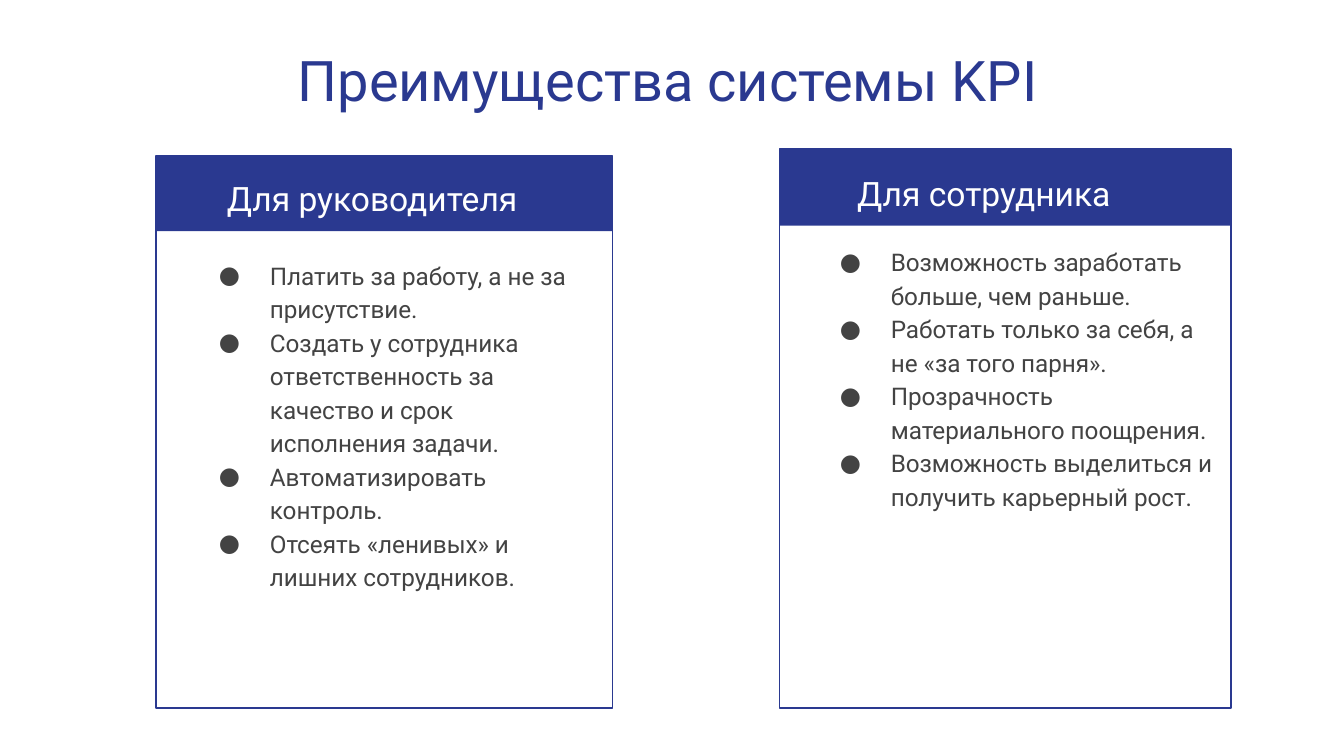
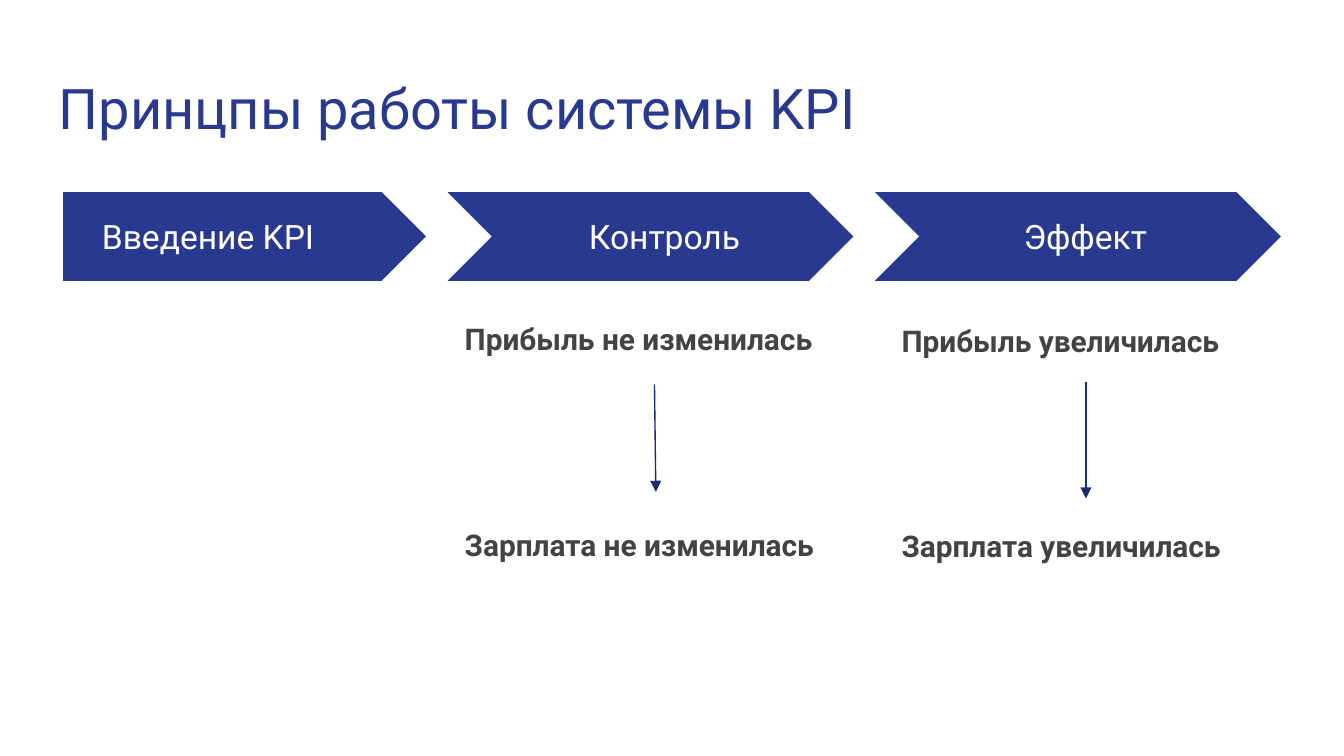
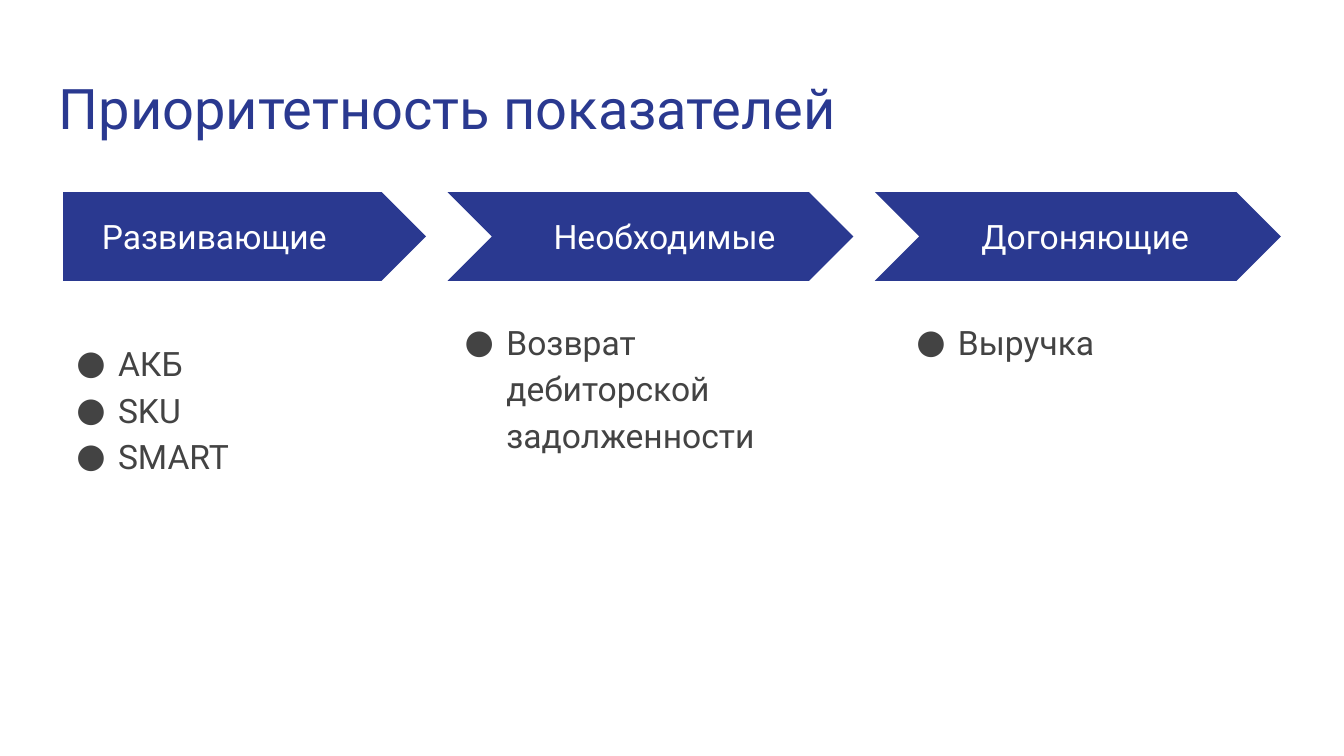
from typing import NamedTuple

from lxml.etree import SubElement
from pptx import Presentation
from pptx.dml.color import RGBColor
from pptx.enum.shapes import MSO_CONNECTOR as Connector, MSO_SHAPE as Preset
from pptx.enum.text import MSO_ANCHOR as Anchor, PP_ALIGN as Align
from pptx.oxml.ns import qn
from pptx.util import Inches, Pt

COLORS = {"navy": "2A3990", "arrow": "1E2B73", "text": "434343", "white": "FFFFFF"}
FONT = "Roboto"
CELL = 0.1  # grid cell side in inches: 100 columns by 56.25 rows
COLUMNS, ROWS = 100, 56.25
INSET = 1
LEADING = 1.15
STEP_GAP = 1.6


class Box(NamedTuple):
    """A region measured in grid columns and rows."""
    left: float
    top: float
    width: float
    height: float

    def within(self, left, top, width, height):
        return Box(self.left + left, self.top + top, width, height)


STEP_ROW = Box(4.7, 14.3, 90.6, 6.6)


def grid(cells):
    return Inches(round(cells * CELL, 3))


def color(name):
    return RGBColor.from_string(COLORS[name])


# Basic parts
def add_preset(page, preset, box, fill=None, line=None):
    shape = page.shapes.add_shape(preset, *map(grid, box))
    shape.shadow.inherit = False
    if fill:
        shape.fill.solid()
        shape.fill.fore_color.rgb = color(fill)
    else:
        shape.fill.background()
    if line:
        shape.line.color.rgb = color(line)
        shape.line.width = Pt(0.75)
    else:
        shape.line.fill.background()
    return shape


def indent_para(para, left, hanging=0):
    properties = para._p.get_or_add_pPr()
    properties.set("marL", str(grid(left)))
    properties.set("indent", str(-grid(hanging)))
    return properties


def add_bullet(para, left, hanging):
    properties = indent_para(para, left, hanging)
    tint = SubElement(properties, qn("a:buClr"))
    SubElement(tint, qn("a:srgbClr"), val=COLORS["text"])
    SubElement(properties, qn("a:buFont"), typeface=FONT)
    SubElement(properties, qn("a:buChar"), char="●")


def add_text(page, box, lines, size, ink="text", bold=False, align=Align.LEFT,
             anchor=Anchor.TOP, leading=None, bullet=None, indent=0, gap=0):
    frame = page.shapes.add_textbox(*map(grid, box)).text_frame
    frame.word_wrap = True
    frame.vertical_anchor = anchor
    frame.margin_left = frame.margin_right = grid(INSET)
    frame.margin_top = frame.margin_bottom = grid(INSET)
    for number, line in enumerate(lines):
        para = frame.add_paragraph() if number else frame.paragraphs[0]
        if bullet:
            add_bullet(para, *bullet)
        elif indent:
            indent_para(para, indent)
        para.alignment = align
        if leading:
            para.line_spacing = leading
        if number and gap:
            para.space_before = Pt(gap)
        span = para.add_run()
        span.text = line
        span.font.name = FONT
        span.font.size = Pt(size)
        span.font.bold = bold
        span.font.color.rgb = color(ink)


def add_arrow(page, start, end):
    arrow = page.shapes.add_connector(Connector.STRAIGHT, *map(grid, start + end))
    arrow.line.color.rgb = color("arrow")
    arrow.line.width = Pt(0.75)
    SubElement(arrow.line._get_or_add_ln(), qn("a:tailEnd"), type="triangle")
    SubElement(arrow._element.spPr, qn("a:effectLst"))


def add_title(page, text, left=3.4, top=4.5, align=Align.LEFT):
    add_text(page, Box(left, top, 93.2, 6.6), [text], 30, "navy", align=align)


# Card: filled header over an outlined frame with a bulleted list
def add_card(page, box, header_height, heading, heading_at, points, points_box):
    add_preset(page, Preset.RECTANGLE, box.within(0, 0, box.width, header_height), "navy")
    add_preset(page, Preset.RECTANGLE, box, line="navy")
    add_text(page, box.within(*heading_at, 27.3, 5), [heading], 18, "white",
             leading=LEADING)
    add_text(page, box.within(*points_box), points, 13, leading=LEADING,
             bullet=(5, 3.8))


# Row of three steps; returns the box of each arrow
def add_steps(page, row, labels):
    steps = []
    left = 0
    styles = [  # preset, width, label offset, label indent, alignment
        (Preset.PENTAGON, 27, 0, 1.9, Align.LEFT),
        (Preset.CHEVRON, 30.2, 3.2, 1.2, Align.CENTER),
        (Preset.CHEVRON, 30.2, 3.3, 0, Align.CENTER),
    ]
    for label, (preset, width, offset, indent, align) in zip(labels, styles):
        step = row.within(left, 0, width, row.height)
        add_preset(page, preset, step, "navy").adjustments[0] = 0.5
        add_text(page, step.within(offset, 1.6, 24.7, 3.4), [label], 18, "white",
                 align=align, anchor=Anchor.MIDDLE, indent=indent)
        steps.append(step)
        left += width + STEP_GAP
    return steps


# Cause above its result, joined by an arrow
def add_outcome(page, box, lines, start, end):
    add_text(page, box, lines, 16, bold=True, leading=LEADING, gap=88)
    add_arrow(page, *[(box.left + x, box.top + y) for x, y in (start, end)])


# Slides
def build_benefits(page):
    add_title(page, "Преимущества системы KPI", 3.1, 2.4, Align.CENTER)
    add_card(page, Box(11.6, 11.6, 34, 41.1), 5.6, "Для руководителя", (4.3, 0.2), [
        "Платить за работу, а не за присутствие.",
        "Создать у сотрудника ответственность за качество и срок исполнения задачи.",
        "Автоматизировать контроль.",
        "Отсеять «ленивых» и лишних сотрудников.",
    ], (2.5, 6.5, 30.2, 33.8))
    add_card(page, Box(58, 11.1, 33.6, 41.6), 5.7, "Для сотрудника", (4.8, 0.3), [
        "Возможность заработать больше, чем раньше.",
        "Работать только за себя, а не «за того парня».",
        "Прозрачность материального поощрения.",
        "Возможность выделиться и получить карьерный рост.",
    ], (2.3, 6, 31.2, 34.6))


def build_principles(page):
    add_title(page, "Принцпы работы системы KPI")
    _, control, effect = add_steps(page, STEP_ROW, ["Введение KPI", "Контроль", "Эффект"])
    add_outcome(page, control.within(0.3, 8.2, 28.6, 29),
                ["Прибыль не изменилась", "Зарплата не изменилась"],
                (15.1, 6.1), (15.2, 14.1))
    add_outcome(page, effect.within(1, 8.3, 27, 29),
                ["Прибыль увеличилась", "Зарплата увеличилась"],
                (14.7, 5.8), (14.7, 14.5))


def build_priorities(page):
    add_title(page, "Приоритетность показателей")
    steps = add_steps(page, STEP_ROW, ["Развивающие", "Необходимые", "Догоняющие"])
    lists = [
        ((0, 9.8, 25.5, 29), ["АКБ", "SKU", "SMART"]),
        ((0.3, 8.2, 28.6, 29), ["Возврат дебиторской задолженности"]),
        ((2.1, 8.2, 27, 29), ["Выручка"]),
    ]
    for step, (place, measures) in zip(steps, lists):
        add_text(page, step.within(*place), measures, 18, leading=LEADING,
                 bullet=(3.1, 3.1))


def main():
    deck = Presentation()
    deck.slide_width, deck.slide_height = grid(COLUMNS), grid(ROWS)
    for build in (build_benefits, build_principles, build_priorities):
        build(deck.slides.add_slide(deck.slide_layouts[6]))
    deck.save("out.pptx")


if __name__ == "__main__":
    main()
